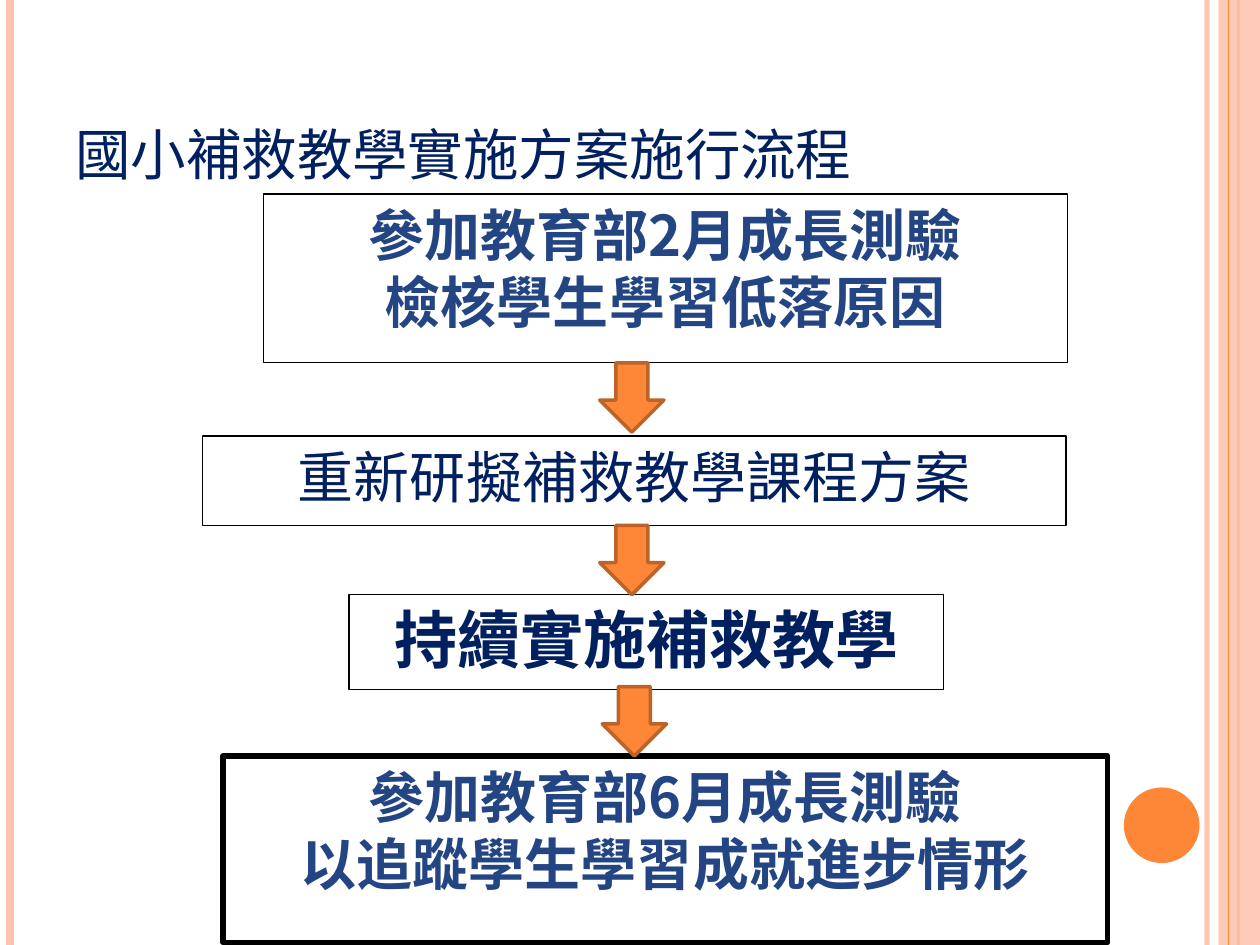
from lxml import etree
from pptx import Presentation
from pptx.dml.color import RGBColor
from pptx.enum.shapes import MSO_CONNECTOR, MSO_SHAPE
from pptx.enum.text import MSO_ANCHOR, PP_ALIGN
from pptx.oxml.ns import qn
from pptx.util import Inches, Pt

RECTANGLE, OVAL, DOWN_ARROW = MSO_SHAPE.RECTANGLE, MSO_SHAPE.OVAL, MSO_SHAPE.DOWN_ARROW
STRAIGHT = MSO_CONNECTOR.STRAIGHT
TOP, BOTTOM = MSO_ANCHOR.TOP, MSO_ANCHOR.BOTTOM
LEFT, CENTER = PP_ALIGN.LEFT, PP_ALIGN.CENTER

FONT = "Noto Sans CJK SC"
COLORS = {
    "white": "FFFFFF",
    "black": "000000",
    "navy": "002060",
    "blue": "244583",
    "orange": "FE8637",
    "rust": "BC6329",
    "peach": "FEC3AE",
}


class FlowSlide:
    """Holds the style and the current slide."""

    def __init__(self, presentation):
        self.slide = presentation.slides.add_slide(presentation.slide_layouts[6])

    def color(self, name):
        return RGBColor.from_string(COLORS[name])

    def set_alpha(self, fill, percent):
        color = fill._xPr.find(qn("a:solidFill"))[0]
        etree.SubElement(color, qn("a:alpha")).set("val", str(percent * 1000))

    def stripe(self, x, width, color, alpha=None):
        """Vertical line over the whole slide height."""
        line = self.slide.shapes.add_connector(
            STRAIGHT, Inches(x), Inches(0), Inches(x), Inches(7.5))
        line.line.color.rgb = self.color(color)
        line.line.width = Pt(width)
        if alpha:
            self.set_alpha(line.line.fill, alpha)
        etree.SubElement(line._element.spPr, qn("a:effectLst"))

    def shape(self, kind, box, fill=None, line=None, width=0.75, alpha=None):
        shape = self.slide.shapes.add_shape(kind, *map(Inches, box))
        shape.shadow.inherit = False
        if fill:
            shape.fill.solid()
            shape.fill.fore_color.rgb = self.color(fill)
        else:
            shape.fill.background()
        if alpha:
            self.set_alpha(shape.fill, alpha)
        if line:
            shape.line.color.rgb = self.color(line)
            shape.line.width = Pt(width)
        else:
            shape.line.fill.background()
        return shape

    def text(self, shape, lines, size, color, bold=False, align=CENTER,
             anchor=TOP, small_caps=False):
        frame = shape.text_frame
        frame.word_wrap = True
        frame.vertical_anchor = anchor
        font_format = {"name": FONT, "size": Pt(size), "bold": bold}
        for index, words in enumerate(lines):
            paragraph = frame.add_paragraph() if index else frame.paragraphs[0]
            paragraph.alignment = align
            run = paragraph.add_run()
            run.text = words
            for attribute, value in font_format.items():
                setattr(run.font, attribute, value)
            run.font.color.rgb = self.color(color)
            properties = run._r.get_or_add_rPr()
            etree.SubElement(properties, qn("a:ea")).set("typeface", FONT)
            if small_caps:
                properties.set("cap", "small")


def main():
    presentation = Presentation()
    presentation.slide_width, presentation.slide_height = Inches(10), Inches(7.5)
    flow = FlowSlide(presentation)

    # Side decoration
    flow.stripe(9.58, 3, "peach", alpha=93)
    flow.stripe(0.08, 4.5, "peach")
    flow.stripe(9.83, 1.5, "orange")
    flow.shape(RECTANGLE, (9.67, 0, 0.33, 7.5), "peach", alpha=87)
    flow.stripe(9.75, 0.75, "orange")
    flow.shape(OVAL, (8.92, 6.25, 0.6, 0.6), "orange")

    # Title
    title = flow.shape(RECTANGLE, (0.5, 0.3, 8.17, 1.25), "white")
    flow.text(title, ["國小補救教學實施方案施行流程"], 39.6, "navy",
              align=LEFT, anchor=BOTTOM, small_caps=True)

    # Steps: box, fill, line width, lines of text, size, colour, bold
    steps = [
        ((1.77, 6, 7.02, 1.48), None, 3.25,
         ["參加教育部6月成長測驗", "以追蹤學生學習成就進步情形"], 32, "blue", True),
        ((2.09, 1.54, 6.38, 1.34), "white", 0.75,
         ["參加教育部2月成長測驗", "檢核學生學習低落原因"], 32, "blue", True),
        ((1.61, 3.46, 6.85, 0.71), "white", 0.75,
         ["重新研擬補救教學課程方案"], 32, "navy", False),
        ((2.77, 4.72, 4.72, 0.75), "white", 0.75,
         ["持續實施補救教學"], 36, "navy", True),
    ]
    for box, fill, width, lines, size, color, bold in steps:
        step = flow.shape(RECTANGLE, box, fill, "black", width)
        flow.text(step, lines, size, color, bold)

    # Arrows between the steps
    for x, y in [(4.76, 2.88), (4.76, 4.17), (4.78, 5.45)]:
        flow.shape(DOWN_ARROW, (x, y, 0.51, 0.55), "orange", "rust", 2)

    presentation.save("out.pptx")


if __name__ == "__main__":
    main()
